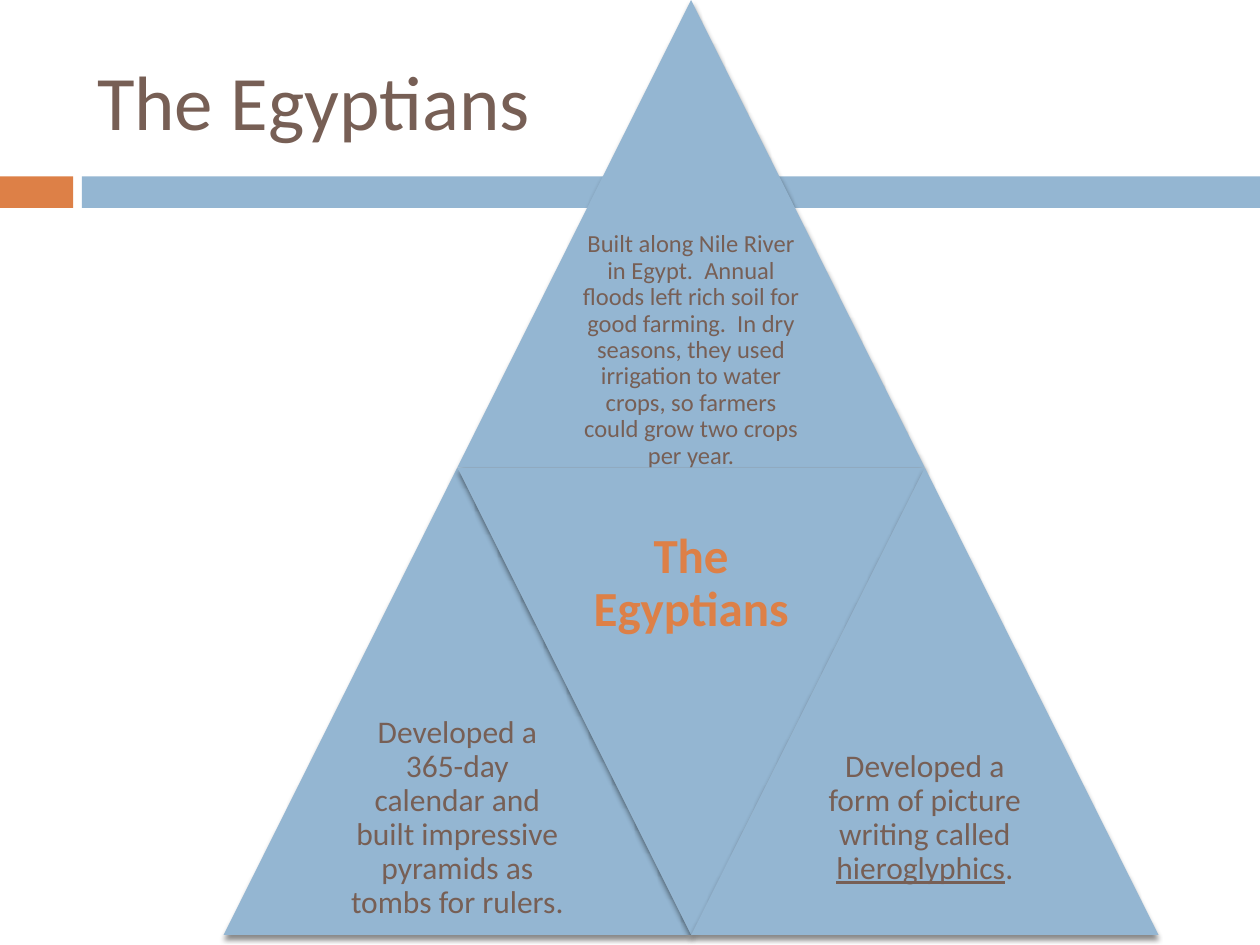
from lxml import etree
from pptx import Presentation
from pptx.dml.color import RGBColor
from pptx.enum.shapes import MSO_SHAPE
from pptx.enum.text import MSO_ANCHOR, PP_ALIGN
from pptx.oxml import parse_xml
from pptx.oxml.ns import nsdecls, qn
from pptx.util import Inches, Pt

RECT, TRIANGLE = MSO_SHAPE.RECTANGLE, MSO_SHAPE.ISOSCELES_TRIANGLE
MIDDLE = MSO_ANCHOR.MIDDLE
LEFT, CENTER = PP_ALIGN.LEFT, PP_ALIGN.CENTER

BROWN = RGBColor(0x77, 0x5F, 0x55)
ORANGE = RGBColor(0xDD, 0x80, 0x47)
BLUE = RGBColor(0x94, 0xB6, 0xD2)

SIDE = 3.71
APEX_LEFT = 3.63

SHADOW = (
    f'<a:effectLst {nsdecls("a")}>'
    '<a:outerShdw blurRad="38100" dist="30480" dir="5400000" rotWithShape="0">'
    '<a:srgbClr val="000000"><a:alpha val="45000"/></a:srgbClr>'
    '</a:outerShdw></a:effectLst>'
)


class Deck:
    font = "Calibri"

    def __init__(self):
        self.prs = Presentation()
        self.prs.slide_width = Inches(10)
        self.prs.slide_height = Inches(7.5)
        self.s = self.prs.slides.add_slide(self.prs.slide_layouts[5])

    def run(self, p, text, size, color, bold=False, underline=False):
        r = p.add_run()
        r.text = text
        r.font.name = self.font
        r.font.size = Pt(size)
        r.font.color.rgb = color
        r.font.bold = bold
        r.font.underline = underline

    def title(self, text, x, y, w, h):
        sp = self.s.shapes.title
        sp.left, sp.top, sp.width, sp.height = map(Inches, (x, y, w, h))
        tf = sp.text_frame
        tf.vertical_anchor = MIDDLE
        p = tf.paragraphs[0]
        p.alignment = LEFT
        self.run(p, text, 44, BROWN)

    def shape(self, kind, x, y, w, h, color):
        sp = self.s.shapes.add_shape(kind, *map(Inches, (x, y, w, h)))
        sp.shadow.inherit = False
        sp.fill.solid()
        sp.fill.fore_color.rgb = color
        sp.line.fill.background()
        return sp

    def triangle(self, x, y, inverted=False):
        sp = self.shape(TRIANGLE, x, y, SIDE, SIDE, BLUE)
        sp.rotation = 180 if inverted else 0
        sp_pr = sp.element.spPr
        sp_pr.replace(sp_pr.find(qn("a:effectLst")), parse_xml(SHADOW))

    def label(self, x, y, runs, size, color, inset, bold=False):
        sp = self.s.shapes.add_textbox(*map(Inches, (x, y, SIDE / 2, SIDE / 2)))
        tf = sp.text_frame
        tf.word_wrap = True
        tf.vertical_anchor = MIDDLE
        tf.margin_left = tf.margin_right = Inches(inset)
        tf.margin_top = tf.margin_bottom = Inches(inset)
        p = tf.paragraphs[0]
        p.alignment = CENTER
        p.line_spacing = 0.9
        space = etree.SubElement(p._p.get_or_add_pPr(), qn("a:spcAft"))
        etree.SubElement(space, qn("a:spcPct")).set("val", "35000")
        for text, underline in runs:
            self.run(p, text, size, color, bold, underline)

    def panel(self, x, y, runs, size, inset, color=BROWN, inverted=False):
        self.triangle(x, y, inverted)
        text_top = y if inverted else y + SIDE / 2
        self.label(x + SIDE / 4, text_top, runs, size, color, inset, inverted)


def main():
    deck = Deck()
    deck.shape(RECT, 0, 1.4, 0.58, 0.25, ORANGE)
    deck.shape(RECT, 0.65, 1.4, 9.35, 0.25, BLUE)
    deck.title("The Egyptians", 0.67, 0.25, 8.92, 1.08)

    deck.panel(APEX_LEFT, 0, [(
        "Built along Nile River in Egypt.  Annual floods left rich soil for "
        "good farming.  In dry seasons, they used irrigation to water crops, "
        "so farmers could grow two crops per year.", False)], 14, 0.06)
    deck.panel(APEX_LEFT - SIDE / 2, SIDE, [(
        "Developed a 365-day calendar and built impressive pyramids as "
        "tombs for rulers.", False)], 18, 0.07)
    deck.panel(APEX_LEFT, SIDE, [("The Egyptians", False)], 28, 0.12,
               ORANGE, inverted=True)
    deck.panel(APEX_LEFT + SIDE / 2, SIDE, [
        ("Developed a form of picture writing called ", False),
        ("hieroglyphics", True),
        (".", False)], 18, 0.07)
    deck.prs.save("out.pptx")


if __name__ == "__main__":
    main()
